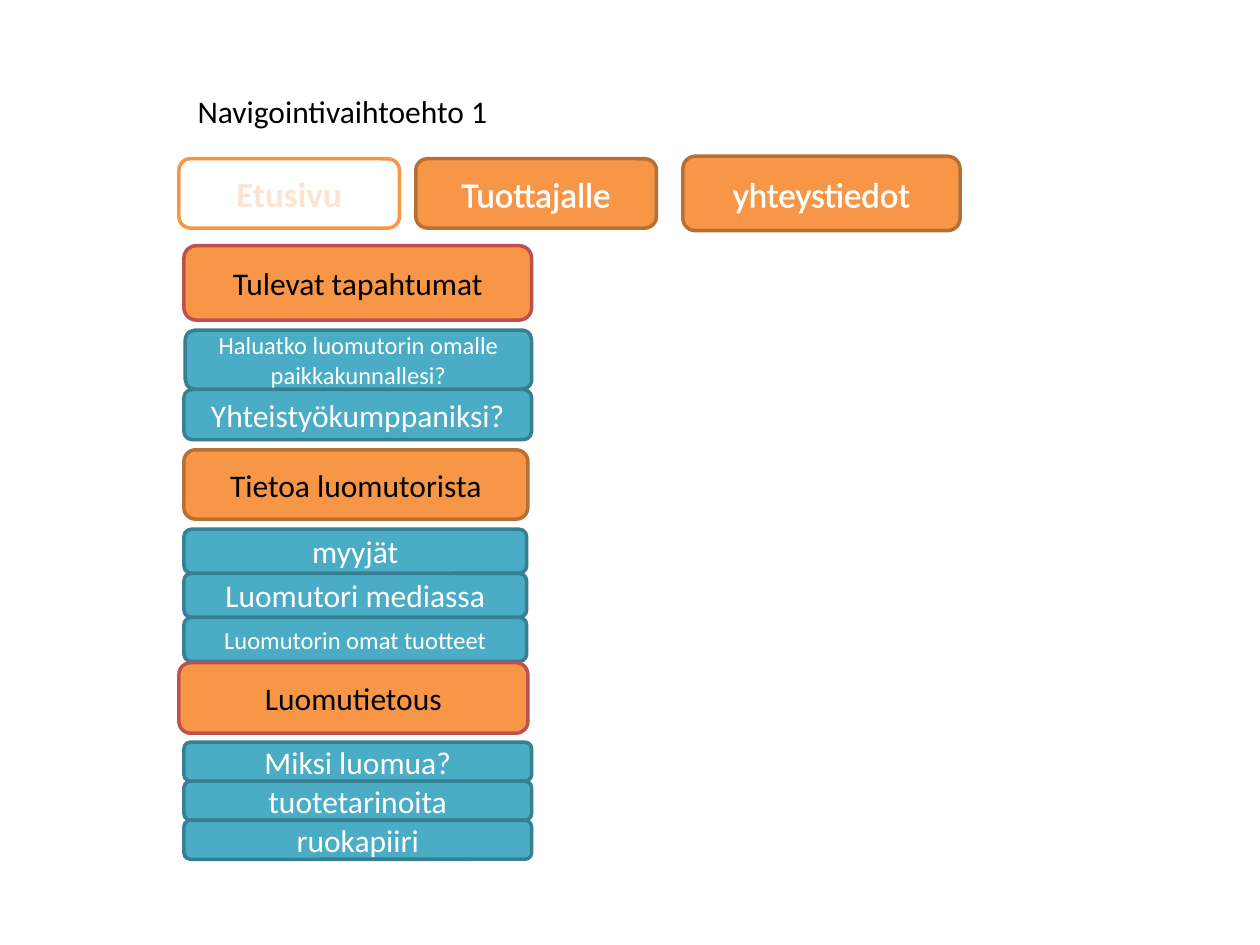
from dataclasses import dataclass

from lxml import etree
from pptx import Presentation
from pptx.dml.color import RGBColor
from pptx.enum.shapes import MSO_SHAPE
from pptx.enum.text import MSO_ANCHOR, MSO_AUTO_SIZE, PP_ALIGN
from pptx.oxml.ns import qn
from pptx.util import Inches, Pt

ROUNDED = MSO_SHAPE.ROUNDED_RECTANGLE
MIDDLE = MSO_ANCHOR.MIDDLE
CENTER = PP_ALIGN.CENTER
FIT_SHAPE = MSO_AUTO_SIZE.SHAPE_TO_FIT_TEXT


@dataclass(frozen=True)
class Theme:
    font: str = "Calibri"
    white: str = "FFFFFF"
    black: str = "000000"
    orange: str = "F79646"
    brown: str = "B76F34"
    red: str = "C0504D"
    teal: str = "4BACC6"
    dark_teal: str = "377F92"
    pale: str = "FDE4D0"
    tab_size: float = 20
    body_size: float = 18
    small_size: float = 14
    border: float = 2
    text_outline: float = 1.45


class NavigationSlide:
    """Draws navigation boxes on one slide in a shared theme."""

    def __init__(self, prs, theme):
        self.theme = theme
        self.slide = prs.slides.add_slide(prs.slide_layouts[6])

    def label(self, tf, text, size, color):
        p = tf.paragraphs[0]
        p.font.name = self.theme.font
        p.font.size = Pt(size)
        p.font.color.rgb = RGBColor.from_string(color)
        r = p.add_run()
        r.text = text
        return p

    def box(self, text, bounds, fill, line, color, size):
        s = self.slide.shapes.add_shape(ROUNDED, *map(Inches, bounds))
        s.shadow.inherit = False
        s.fill.solid()
        s.fill.fore_color.rgb = RGBColor.from_string(fill)
        s.line.color.rgb = RGBColor.from_string(line)
        s.line.width = Pt(self.theme.border)
        s.text_frame.word_wrap = True
        s.text_frame.vertical_anchor = MIDDLE
        p = self.label(s.text_frame, text, size, color)
        p.alignment = CENTER
        return p

    def tab(self, text, bounds, fill, line, color):
        p = self.box(text, bounds, fill, line, color, self.theme.tab_size)
        props = p.runs[0].font._element
        ln = etree.Element(qn("a:ln"), w=str(Pt(self.theme.text_outline)))
        solid = etree.SubElement(ln, qn("a:solidFill"))
        etree.SubElement(solid, qn("a:srgbClr"), val=color)
        props.insert(0, ln)
        return p

    def section(self, text, bounds, line):
        t = self.theme
        self.box(text, bounds, t.orange, line, t.black, t.body_size)

    def link(self, text, bounds, size):
        t = self.theme
        self.box(text, bounds, t.teal, t.dark_teal, t.white, size)

    def links(self, items, left, top, width, height):
        for i, (text, size) in enumerate(items):
            self.link(text, (left, top + i * height, width, height), size)

    def title(self, text, bounds):
        tf = self.slide.shapes.add_textbox(*map(Inches, bounds)).text_frame
        tf.word_wrap = False
        tf.auto_size = FIT_SHAPE
        self.label(tf, text, self.theme.body_size, self.theme.black)


def main():
    prs = Presentation()
    prs.slide_width, prs.slide_height = Inches(10), Inches(7.5)
    t = Theme()
    nav = NavigationSlide(prs, t)
    body, small = t.body_size, t.small_size

    nav.title("Navigointivaihtoehto 1", (1.47, 0.68, 2.53, 0.4))

    home = nav.tab("Etusivu", (1.42, 1.26, 1.75, 0.55), t.white, t.orange, t.pale)
    home.font.bold = True
    nav.tab("Tuottajalle", (3.3, 1.26, 1.91, 0.55), t.orange, t.brown, t.white)
    nav.tab("yhteystiedot", (5.42, 1.24, 2.2, 0.59), t.orange, t.brown, t.white)

    nav.section("Tulevat tapahtumat", (1.46, 1.95, 2.76, 0.59), t.red)
    nav.link("Haluatko luomutorin omalle paikkakunnallesi?",
             (1.47, 2.62, 2.75, 0.47), small)
    nav.link("Yhteistyökumppaniksi?", (1.46, 3.09, 2.76, 0.4), body)

    nav.section("Tietoa luomutorista", (1.46, 3.57, 2.73, 0.55), t.brown)
    nav.links([("myyjät", body), ("Luomutori mediassa", body),
               ("Luomutorin omat tuotteet", small)], 1.46, 4.2, 2.72, 0.35)

    nav.section("Luomutietous", (1.42, 5.26, 2.77, 0.56), t.red)
    nav.links([("Miksi luomua?", body), ("tuotetarinoita", body),
               ("ruokapiiri", body)], 1.46, 5.89, 2.76, 0.31)

    prs.save("out.pptx")


if __name__ == "__main__":
    main()
